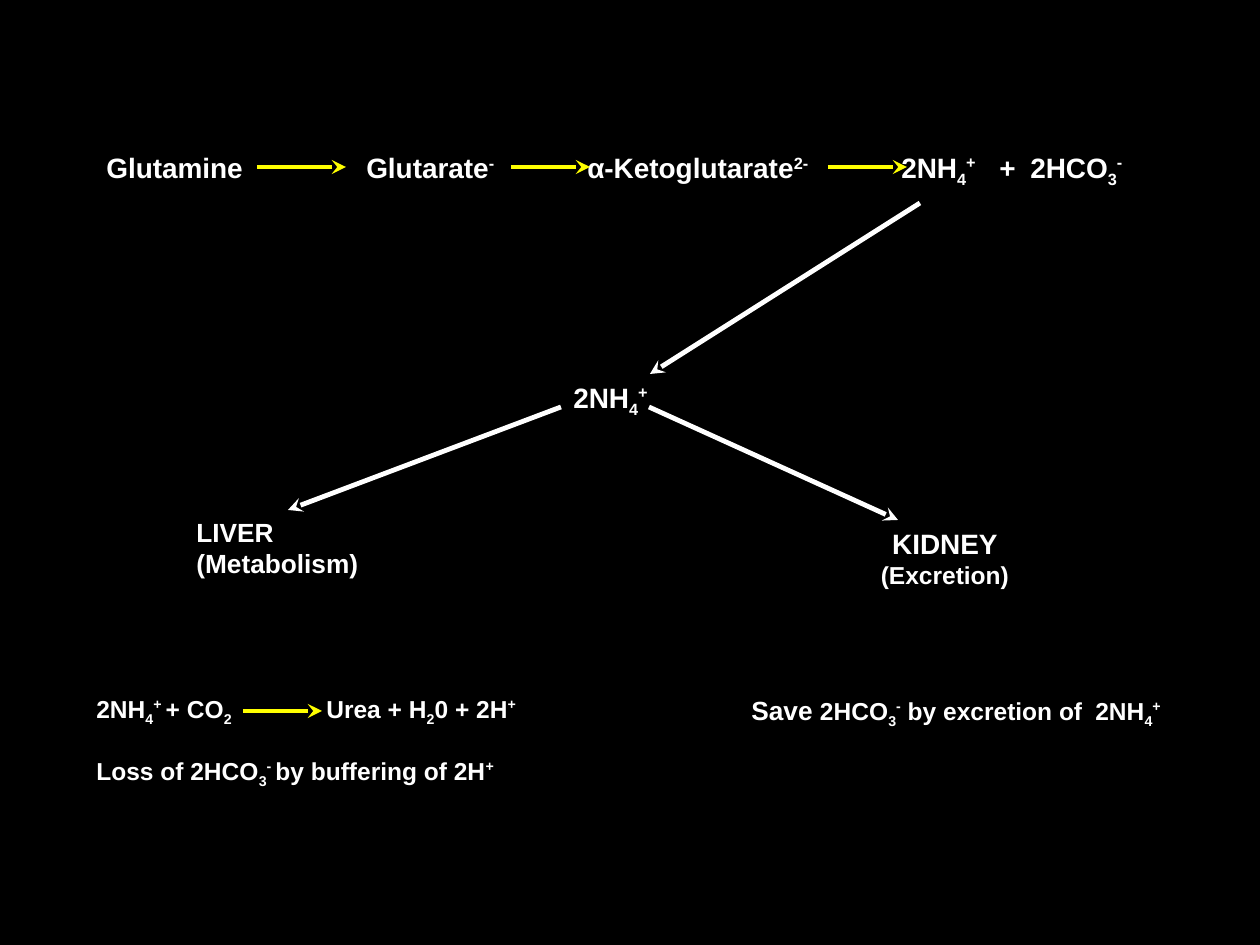
from lxml.etree import SubElement
from pptx import Presentation
from pptx.dml.color import RGBColor
from pptx.enum.shapes import MSO_CONNECTOR
from pptx.enum.text import PP_ALIGN
from pptx.oxml.ns import qn
from pptx.util import Pt

EMU_PER_PX = 914400 // 126
WHITE, YELLOW, BLACK = "FFFFFF", "FFFF00", "000000"
BASELINES = {"_": -25000, "^": 36000, "~": 30000}


def px(n):
    return n * EMU_PER_PX


def color(hex_string):
    return RGBColor.from_string(hex_string)


def add_formula(p, markup, size, tabs=()):
    """Split markup at "|"; a part led by _ is lowered, by ^ or ~ raised."""
    if tabs:
        tab_list = SubElement(p._p.get_or_add_pPr(), qn("a:tabLst"))
        for pos in tabs:
            SubElement(tab_list, qn("a:tab"), pos=str(px(pos)), algn="l")
    for part in markup.split("|"):
        r = p.add_run()
        baseline = BASELINES.get(part[0])
        r.text = part[1:] if baseline else part
        r.font.name = "Arial"
        r.font.size = Pt(size)
        r.font.bold = True
        r.font.color.rgb = color(WHITE)
        if baseline:
            r._r.get_or_add_rPr().set("baseline", str(baseline))


def add_text(s, box, lines, wrap=False, align=PP_ALIGN.LEFT, gap=0):
    """Place lines of (markup, size, tab positions) in a text box."""
    tf = s.shapes.add_textbox(*map(px, box)).text_frame
    tf.word_wrap = wrap
    for i, line in enumerate(lines):
        p = tf.add_paragraph() if i else tf.paragraphs[0]
        add_formula(p, *line)
        p.alignment = align
        if i and gap:
            p.space_before = Pt(gap)
    return tf


def add_arrow(s, x1, y1, x2, y2, hex_string):
    sp = s.shapes.add_connector(MSO_CONNECTOR.STRAIGHT, *map(px, (x1, y1, x2, y2)))
    sp.line.color.rgb = color(hex_string)
    sp.line.width = Pt(2.75)
    SubElement(sp.line._get_or_add_ln(), qn("a:tailEnd"), type="stealth")
    SubElement(sp._element.spPr, qn("a:effectLst"))


def add_pathway(s, x, y):
    """Glutamine breakdown along the top."""
    markup = ("Glutamine\tGlutarate|~-|\tα-Ketoglutarate|~2-|"
              "\t2NH|_4|^+|\t+\t2HCO|_3|^-")
    add_text(s, (x, y, 1060, 47), [(markup, 16, (260, 481, 795, 893, 924))], wrap=True)
    for start, end in ((163, 252), (417, 496), (734, 813)):
        add_arrow(s, x + start, y + 23, x + end, y + 23, YELLOW)


def add_branches(s, x, y):
    """Ammonium and the two organs it goes to."""
    add_text(s, (x, y, 103, 47), [("2NH|_4|^+", 16)])
    add_text(s, (x - 377, y + 136, 189, 77), [("LIVER", 15), ("(Metabolism)", 15)])
    add_text(s, (x + 307, y + 146, 154, 77), [("KIDNEY", 16), ("(Excretion)", 14)],
             align=PP_ALIGN.CENTER)
    add_arrow(s, x + 359, y - 171, x + 89, y, WHITE)
    add_arrow(s, x, y + 33, x - 273, y + 136, WHITE)
    add_arrow(s, x + 88, y + 33, x + 337, y + 146, WHITE)


def add_liver_result(s, x, y):
    add_text(s, (x, y, 645, 92), [
        ("2NH|_4|^+ |+ CO|_2|\tUrea + H|_2|0 + 2H|^+", 14, (230,)),
        ("Loss of 2HCO|_3|^- |by buffering of 2H|^+", 14),
    ], wrap=True, gap=16)
    add_arrow(s, x + 159, y + 23, x + 238, y + 23, YELLOW)


def add_kidney_result(s, x, y):
    markup = "Save |2HCO|_3|^-| by excretion of\t2NH|_4|^+"
    tf = add_text(s, (x, y, 446, 44), [(markup, 14, (344,))], wrap=True)
    tf.paragraphs[0].runs[0].font.size = Pt(15)


def main():
    prs = Presentation()
    prs.slide_width, prs.slide_height = px(1260), px(945)
    s = prs.slides.add_slide(prs.slide_layouts[6])
    fill = s.background.fill
    fill.solid()
    fill.fore_color.rgb = color(BLACK)
    add_pathway(s, 94, 144)
    add_branches(s, 561, 374)
    add_liver_result(s, 84, 688)
    add_kidney_result(s, 739, 688)
    prs.save("out.pptx")


if __name__ == "__main__":
    main()
